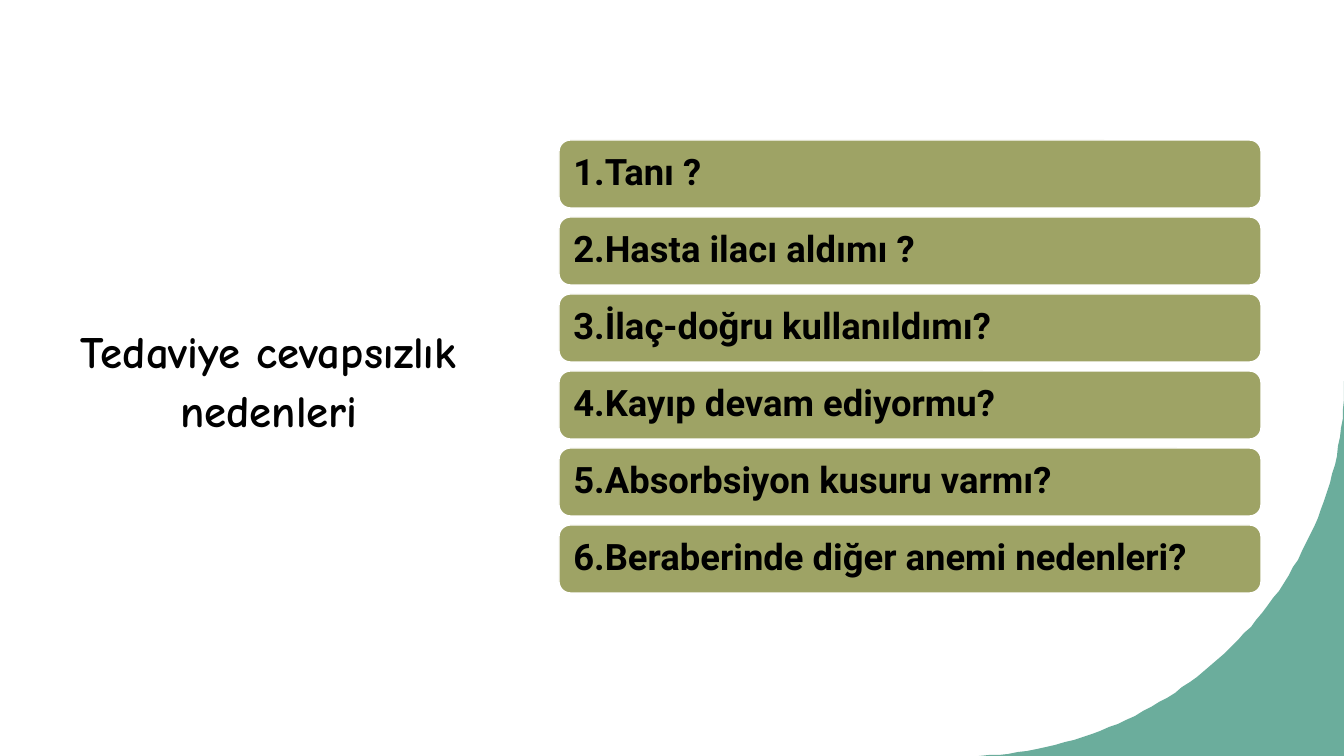
from pptx import Presentation
from pptx.dml.color import RGBColor
from pptx.enum.shapes import MSO_SHAPE as Shape
from pptx.enum.text import MSO_ANCHOR as Anchor, MSO_AUTO_SIZE as AutoSize, PP_ALIGN as Align
from pptx.util import Pt

EMU_PER_PX = 914400 / 100.8
COLORS = {"teal": "6BAD9C", "olive": "9EA365", "white": "FFFFFF", "black": "000000"}
QUESTIONS = [
    "1.Tanı ?",
    "2.Hasta ilacı aldımı ?",
    "3.İlaç-doğru kullanıldımı?",
    "4.Kayıp devam ediyormu?",
    "5.Absorbsiyon kusuru varmı?",
    "6.Beraberinde diğer anemi nedenleri?",
]


def px(count):
    return round(count * EMU_PER_PX)


def write(frame, text, font, size, align, spacing):
    frame.word_wrap = True
    frame.auto_size = AutoSize.NONE
    frame.vertical_anchor = Anchor.MIDDLE
    para = frame.paragraphs[0]
    para.alignment = align
    para.line_spacing = spacing
    span = para.add_run()
    span.text = text
    span.font.name = font
    span.font.size = Pt(size)
    span.font.bold = True
    span.font.color.rgb = RGBColor.from_string(COLORS["black"])


deck = Presentation()
deck.slide_width, deck.slide_height = px(1344), px(756)
page = deck.slides.add_slide(deck.slide_layouts[5])
page.background.fill.solid()
page.background.fill.fore_color.rgb = RGBColor.from_string(COLORS["white"])

# Teal corner, its curved edge sampled from a cubic curve
start, pull_start, pull_end, end = (979, 756), (1176, 747), (1334, 592), (1344, 399)
steps = 60
curve = []
for step in range(steps + 1):
    t = step / steps
    weights = ((1 - t) ** 3, 3 * t * (1 - t) ** 2, 3 * t * t * (1 - t), t ** 3)
    anchors = (start, pull_start, pull_end, end)
    curve.append(tuple(sum(w * a[axis] for w, a in zip(weights, anchors)) for axis in (0, 1)))
outline = page.shapes.build_freeform(1344, 381, scale=EMU_PER_PX)
outline.add_line_segments([(1344, 756), (971, 756)] + curve, close=True)
corner = outline.convert_to_shape()
corner.shadow.inherit = False
corner.fill.solid()
corner.fill.fore_color.rgb = RGBColor.from_string(COLORS["teal"])
corner.line.fill.background()

# Title
title = page.shapes.title
title.left, title.top, title.width, title.height = px(46), px(113), px(446), px(529)
write(title.text_frame, "Tedaviye cevapsızlık nedenleri", "Comic Neue", 32, Align.CENTER, 1.1)

# Question bars
for row, question in enumerate(QUESTIONS):
    bar = page.shapes.add_shape(
        Shape.ROUNDED_RECTANGLE, px(559), px(140 + 77 * row), px(702), px(68))
    bar.shadow.inherit = False
    bar.fill.solid()
    bar.fill.fore_color.rgb = RGBColor.from_string(COLORS["olive"])
    bar.line.color.rgb = RGBColor.from_string(COLORS["white"])
    bar.line.width = Pt(1)
    frame = bar.text_frame
    frame.margin_left = frame.margin_right = px(11)
    frame.margin_top = frame.margin_bottom = px(11)
    write(frame, question, "Roboto", 26, Align.LEFT, 0.9)

deck.save("out.pptx")
